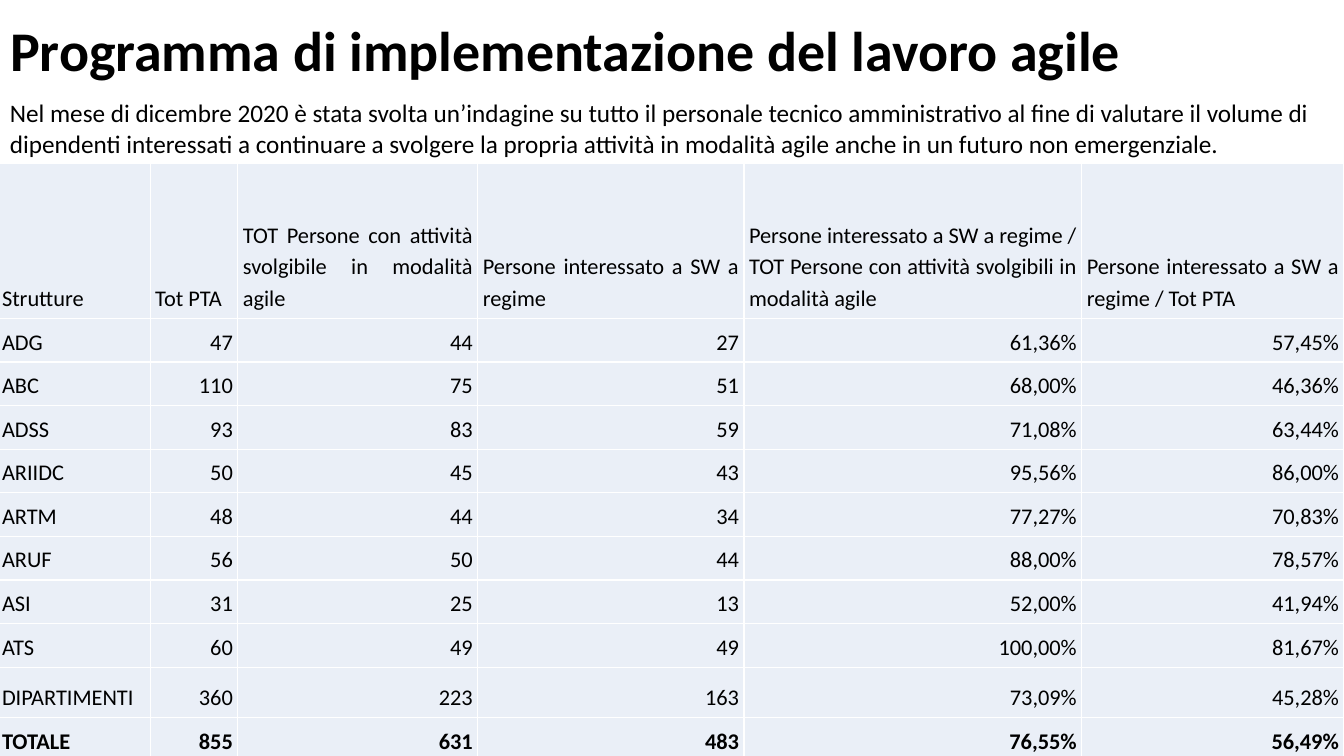
from dataclasses import dataclass

from lxml import etree
from pptx import Presentation
from pptx.dml.color import RGBColor
from pptx.enum import text
from pptx.oxml import ns
from pptx.util import Inches, Pt


@dataclass(frozen=True)
class Theme:
    font: str = "Calibri"
    ink: str = "000000"
    cell: str = "EAEFF7"
    border: str = "FFFFFF"
    title_size: int = 40
    intro_size: int = 18
    table_size: int = 16
    leading: float = 1.15


THEME = Theme()
TITLE = "Programma di implementazione del lavoro agile"
INTRO = (
    "Nel mese di dicembre 2020 è stata svolta un’indagine su tutto il personale tecnico "
    "amministrativo al fine di valutare il volume di dipendenti interessati a continuare a "
    "svolgere la propria attività in modalità agile anche in un futuro non emergenziale."
)
HEADER = (
    "Strutture",
    "Tot PTA",
    "TOT Persone con attività svolgibile in modalità agile",
    "Persone interessato a SW a regime",
    "Persone interessato a SW a regime / TOT Persone con attività svolgibili in modalità agile",
    "Persone interessato a SW a regime / Tot PTA",
)
STRUCTURES = (
    ("ADG", "47", "44", "27", "61,36%", "57,45%"),
    ("ABC", "110", "75", "51", "68,00%", "46,36%"),
    ("ADSS", "93", "83", "59", "71,08%", "63,44%"),
    ("ARIIDC", "50", "45", "43", "95,56%", "86,00%"),
    ("ARTM", "48", "44", "34", "77,27%", "70,83%"),
    ("ARUF", "56", "50", "44", "88,00%", "78,57%"),
    ("ASI", "31", "25", "13", "52,00%", "41,94%"),
    ("ATS", "60", "49", "49", "100,00%", "81,67%"),
    ("DIPARTIMENTI", "360", "223", "163", "73,09%", "45,28%"),
)
TOTAL = ("TOTALE", "855", "631", "483", "76,55%", "56,49%")
COLUMN_WIDTHS = (1.52, 0.87, 2.38, 2.64, 3.35, 2.6)
HEADER_HEIGHT, ROW_HEIGHT, DEPARTMENTS_HEIGHT = 1.54, 0.43, 0.5


def write(para, words, size, bold=False):
    span = para.add_run()
    span.text = words
    span.font.name = THEME.font
    span.font.size = Pt(size)
    span.font.bold = bold
    span.font.color.rgb = RGBColor.from_string(THEME.ink)


def place_text(box, left, top, width, height):
    """Set a text shape on its box and return its first paragraph."""
    box.left, box.top, box.width, box.height = map(Inches, (left, top, width, height))
    frame = box.text_frame
    frame.word_wrap = True
    frame.auto_size = text.MSO_AUTO_SIZE.NONE
    frame.vertical_anchor = text.MSO_ANCHOR.TOP
    frame.margin_left = frame.margin_right = Inches(0.1)
    frame.margin_top = frame.margin_bottom = Inches(0.05)
    return frame.paragraphs[0]


def add_heading(page, left, top, width, height):
    title_height = 0.92
    para = place_text(page.shapes.title, left, top, width, title_height)
    para.alignment = text.PP_ALIGN.JUSTIFY
    para.line_spacing = THEME.leading
    write(para, TITLE, THEME.title_size, bold=True)

    intro = page.shapes.add_textbox(0, 0, 0, 0)
    para = place_text(intro, left, top + title_height, width, height - title_height)
    para.alignment = text.PP_ALIGN.LEFT
    write(para, INTRO, THEME.intro_size)


def add_borders(cell):
    properties = cell._tc.get_or_add_tcPr()
    for side in ("a:lnL", "a:lnR", "a:lnT", "a:lnB"):
        line = etree.SubElement(properties, ns.qn(side), w=str(Pt(1)))
        fill = etree.SubElement(line, ns.qn("a:solidFill"))
        etree.SubElement(fill, ns.qn("a:srgbClr"), val=THEME.border)


def format_cell(cell, words, alignment, bold):
    add_borders(cell)
    cell.fill.solid()
    cell.fill.fore_color.rgb = RGBColor.from_string(THEME.cell)
    cell.vertical_anchor = text.MSO_ANCHOR.BOTTOM
    cell.margin_left = cell.margin_right = Inches(0.05)
    cell.margin_top = cell.margin_bottom = Inches(0.06)
    para = cell.text_frame.paragraphs[0]
    para.alignment = alignment
    para.line_spacing = THEME.leading
    write(para, words, THEME.table_size, bold)


def add_survey_table(page, left, top):
    rows = (HEADER, *STRUCTURES, TOTAL)
    heights = [HEADER_HEIGHT] + [ROW_HEIGHT] * (len(rows) - 1)
    heights[-2] = DEPARTMENTS_HEIGHT
    box = (left, top, sum(COLUMN_WIDTHS), sum(heights))
    table = page.shapes.add_table(len(rows), len(HEADER), *map(Inches, box)).table
    for column, width in zip(table.columns, COLUMN_WIDTHS):
        column.width = Inches(width)
    for r, (row, height) in enumerate(zip(rows, heights)):
        table.rows[r].height = Inches(height)
        for c, words in enumerate(row):
            is_label = r == 0 or c == 0
            alignment = text.PP_ALIGN.JUSTIFY if is_label else text.PP_ALIGN.RIGHT
            format_cell(table.cell(r, c), words, alignment, bold=row is TOTAL)


def main():
    deck = Presentation()
    deck.slide_width, deck.slide_height = Inches(13.33), Inches(7.5)
    page = deck.slides.add_slide(deck.slide_layouts[5])
    add_heading(page, 0, 0, 13.33, 1.62)
    add_survey_table(page, -0.03, 1.62)
    deck.save("out.pptx")


if __name__ == "__main__":
    main()
